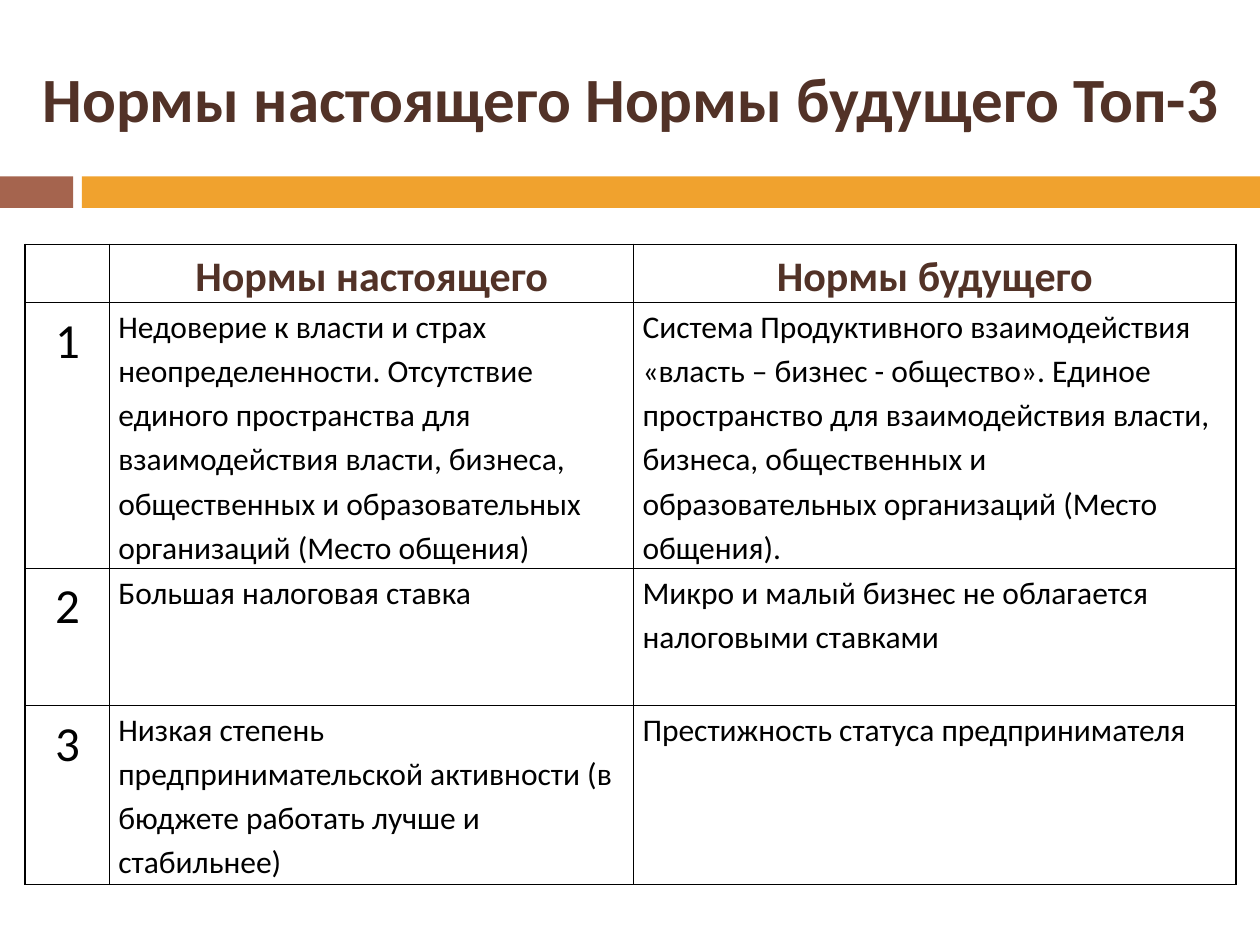
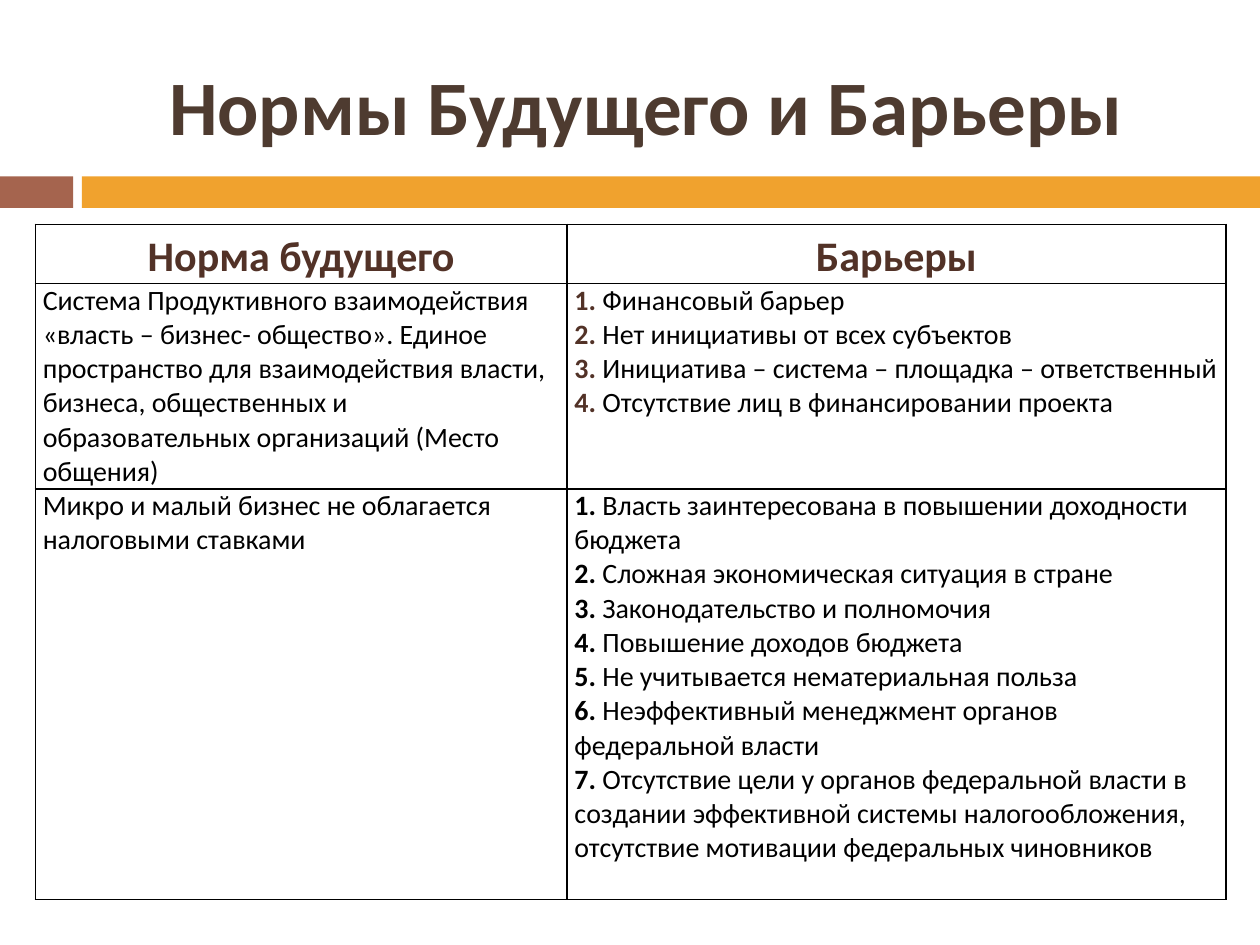
import pptx
import pptx.dml.color
import pptx.enum.shapes
import pptx.enum.text
import pptx.oxml
import pptx.oxml.ns
import pptx.util

COLORS = {
    "title": "4E3B30",
    "heading": "523227",
    "text": "000000",
    "border": "000000",
    "accent": "A5644E",
    "band": "F0A22E",
}
FONT = "Calibri"
# The slide is a grid of 100 columns by 75 rows
GRID_COLUMNS, GRID_ROWS = 100, 75
SLIDE_WIDTH, SLIDE_HEIGHT = pptx.util.Inches(10), pptx.util.Inches(7.5)
CENTER = pptx.enum.text.PP_ALIGN.CENTER
LEFT = pptx.enum.text.PP_ALIGN.LEFT

NORMS = [
    ("", "Нормы настоящего", "Нормы будущего"),
    ("1",
     "Недоверие к власти и страх неопределенности. Отсутствие единого пространства для "
     "взаимодействия власти, бизнеса, общественных и образовательных организаций (Место общения)",
     "Система Продуктивного взаимодействия «власть – бизнес - общество». Единое пространство для "
     "взаимодействия власти, бизнеса, общественных и образовательных организаций (Место общения)."),
    ("2", "Большая налоговая ставка", "Микро и малый бизнес не облагается налоговыми ставками"),
    ("3",
     "Низкая степень предпринимательской активности (в бюджете работать лучше и стабильнее)",
     "Престижность статуса предпринимателя"),
]

BARRIER_HEADINGS = ("Норма будущего", "Барьеры")
# Norm, colour of the barrier numbers, barriers
BARRIERS = [
    ("Система Продуктивного взаимодействия «власть – бизнес- общество». Единое пространство для "
     "взаимодействия власти, бизнеса, общественных и образовательных организаций (Место общения)",
     "heading",
     ["Финансовый барьер",
      "Нет инициативы от всех субъектов",
      "Инициатива – система – площадка – ответственный",
      "Отсутствие лиц в финансировании проекта"]),
    ("Микро и малый бизнес не облагается налоговыми ставками",
     "text",
     ["Власть заинтересована в повышении доходности бюджета",
      "Сложная экономическая ситуация в стране",
      "Законодательство и полномочия",
      "Повышение доходов бюджета",
      "Не учитывается нематериальная польза",
      "Неэффективный менеджмент органов федеральной власти",
      "Отсутствие цели у органов федеральной власти в создании эффективной системы "
      "налогообложения, отсутствие мотивации федеральных чиновников"]),
]


def across(columns):
    return round(SLIDE_WIDTH * columns / GRID_COLUMNS)


def down(rows):
    return round(SLIDE_HEIGHT * rows / GRID_ROWS)


def area(left, top, width, height):
    return across(left), down(top), across(width), down(height)


def rgb(name):
    return pptx.dml.color.RGBColor.from_string(COLORS[name])


def style(paragraph, size, color="text", bold=False, align=LEFT, spacing=1.0):
    paragraph.alignment = align
    paragraph.line_spacing = spacing
    font = paragraph.font
    font.name, font.size, font.bold = FONT, pptx.util.Pt(size), bold
    font.color.rgb = rgb(color)


def add_band(slide, left, width, color):
    band = slide.shapes.add_shape(
        pptx.enum.shapes.MSO_SHAPE.RECTANGLE, *area(left, 14, width, 2.5))
    band.shadow.inherit = False
    band.fill.solid()
    band.fill.fore_color.rgb = rgb(color)
    band.line.fill.background()


def add_title(slide, title, place, size, color):
    frame = slide.shapes.add_textbox(*area(*place)).text_frame
    frame.word_wrap = True
    frame.vertical_anchor = pptx.enum.text.MSO_ANCHOR.MIDDLE
    frame.text = title
    style(frame.paragraphs[0], size, color, True, CENTER)


def add_titled_slide(deck, title, place, size, color):
    slide = deck.slides.add_slide(deck.slide_layouts[6])
    add_band(slide, 0, 5.8, "accent")
    add_band(slide, 6.5, 93.5, "band")
    add_title(slide, title, place, size, color)
    return slide


def add_borders(cell):
    properties = cell._tc.get_or_add_tcPr()
    # Border lines come before the fill in the cell properties
    for position, side in enumerate(("lnL", "lnR", "lnT", "lnB")):
        properties.insert(position, pptx.oxml.parse_xml(
            f'<a:{side} {pptx.oxml.ns.nsdecls("a")} w="{pptx.util.Pt(1)}">'
            f'<a:solidFill><a:srgbClr val="{COLORS["border"]}"/></a:solidFill></a:{side}>'))


def add_grid(slide, left, top, widths, heights, inset):
    frame = slide.shapes.add_table(
        len(heights), len(widths), *area(left, top, sum(widths), sum(heights)))
    table = frame.table
    table.first_row = table.horz_banding = False
    for column, width in zip(table.columns, widths):
        column.width = across(width)
    for row, height in zip(table.rows, heights):
        row.height = down(height)
    for cell in table.iter_cells():
        cell.margin_left = cell.margin_right = across(inset)
        cell.margin_top = cell.margin_bottom = 0
        cell.fill.background()
        add_borders(cell)
    return table


def write(cell, text, size, **look):
    cell.text = text
    style(cell.text_frame.paragraphs[0], size, **look)


def write_heading(cell, text):
    write(cell, text, 24, color="heading", bold=True, align=CENTER, spacing=1.15)


def write_numbered(cell, items, number_color):
    frame = cell.text_frame
    for number, item in enumerate(items, 1):
        paragraph = frame.paragraphs[0] if number == 1 else frame.add_paragraph()
        style(paragraph, 16)
        marker = paragraph.add_run()
        marker.text = f"{number}."
        marker.font.bold = True
        marker.font.color.rgb = rgb(number_color)
        paragraph.add_run().text = f" {item}"


def build_norms(deck):
    slide = add_titled_slide(deck, "Нормы настоящего Нормы будущего Топ-3",
                             (1.6, 2.3, 96.9, 10.8), 36, "heading")
    table = add_grid(slide, 2, 19.4, (6.7, 41.6, 47.8), (4.6, 21.1, 10.9, 14.2), 0.7)
    for row, norms in enumerate(NORMS):
        for column, text in enumerate(norms):
            cell = table.cell(row, column)
            if row == 0:
                write_heading(cell, text)
            elif column == 0:
                write(cell, text, 28, align=CENTER, spacing=1.15)
            else:
                write(cell, text, 18, spacing=1.15)


def build_barriers(deck):
    slide = add_titled_slide(deck, "Нормы Будущего и Барьеры",
                             (6.7, 2.9, 89.2, 10.8), 44, "title")
    table = add_grid(slide, 2.8, 17.8, (42.2, 52.3), (4.7, 16.3, 32.6), 0.6)
    for column, heading in enumerate(BARRIER_HEADINGS):
        write_heading(table.cell(0, column), heading)
    for row, (norm, number_color, barriers) in enumerate(BARRIERS, 1):
        write(table.cell(row, 0), norm, 16)
        write_numbered(table.cell(row, 1), barriers, number_color)


def main():
    deck = pptx.Presentation()
    deck.slide_width, deck.slide_height = SLIDE_WIDTH, SLIDE_HEIGHT
    build_norms(deck)
    build_barriers(deck)
    deck.save("out.pptx")


if __name__ == "__main__":
    main()
